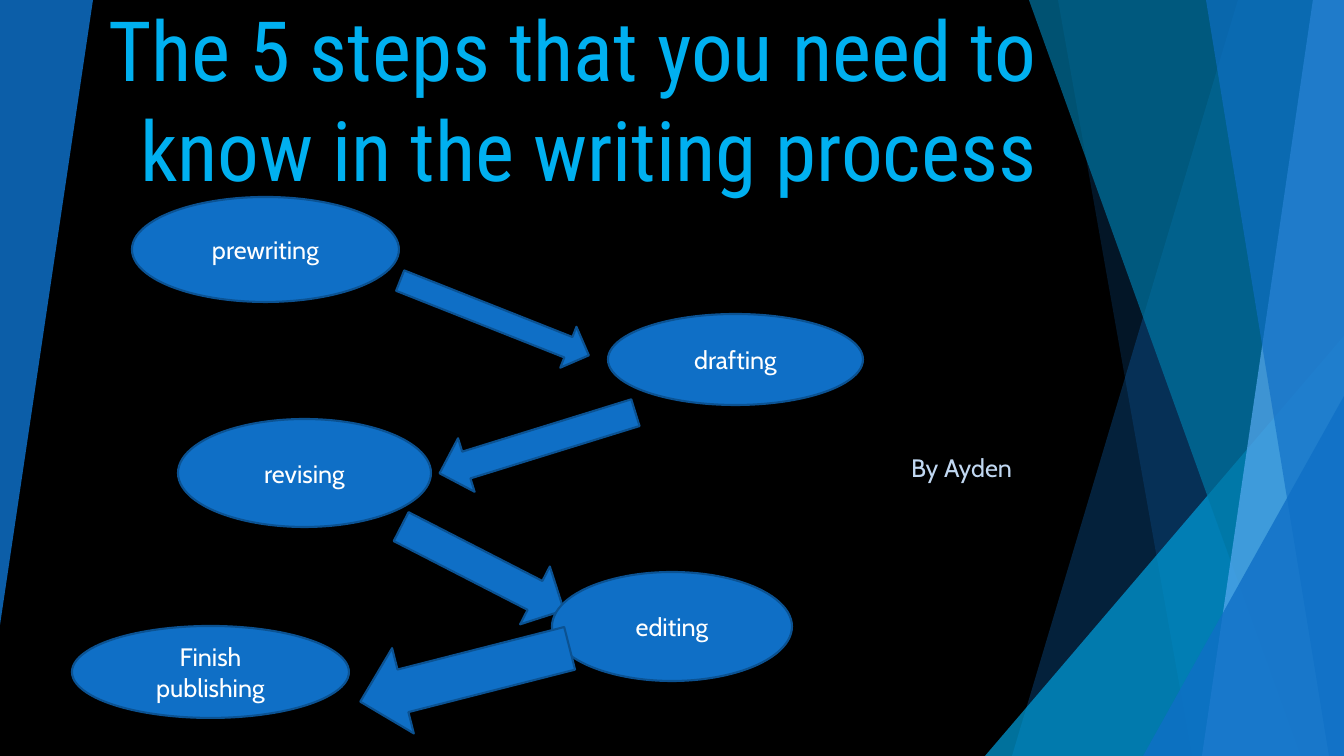
from lxml import etree
from pptx import Presentation
from pptx.dml.color import RGBColor
from pptx.enum.shapes import MSO_SHAPE
from pptx.enum.text import MSO_ANCHOR, PP_ALIGN
from pptx.oxml.ns import qn
from pptx.util import Emu, Pt

OVAL, ARROW, TRIANGLE = MSO_SHAPE.OVAL, MSO_SHAPE.RIGHT_ARROW, MSO_SHAPE.ISOSCELES_TRIANGLE
TOP, MIDDLE, BOTTOM = MSO_ANCHOR.TOP, MSO_ANCHOR.MIDDLE, MSO_ANCHOR.BOTTOM
CENTER, RIGHT = PP_ALIGN.CENTER, PP_ALIGN.RIGHT

WIDTH, HEIGHT = 1344, 756
SCALE = 12192000 / WIDTH
BLUE, DARK_BLUE = "0F6FC6", "0B5292"
HEADING, BODY = "Roboto Condensed", "Cabin"


def px(n):
    return Emu(round(n * SCALE))


def rgb(color):
    return RGBColor.from_string(color)


class Deck:
    def __init__(self):
        self.prs = Presentation()
        self.prs.slide_width, self.prs.slide_height = px(WIDTH), px(HEIGHT)

    def slide(self, background):
        self.s = self.prs.slides.add_slide(self.prs.slide_layouts[6])
        self.s.background.fill.solid()
        self.s.background.fill.fore_color.rgb = rgb(background)

    def paint(self, sp, color, alpha=100, line=None):
        sp.shadow.inherit = False
        sp.fill.solid()
        sp.fill.fore_color.rgb = rgb(color)
        if alpha < 100:
            clr = sp.element.spPr.find(qn("a:solidFill"))[0]
            etree.SubElement(clr, qn("a:alpha")).set("val", str(alpha * 1000))
        if line:
            sp.line.color.rgb = rgb(line)
            sp.line.width = Pt(1.5)
        else:
            sp.line.fill.background()

    def shape(self, kind, box, rotation=0, alpha=100, color=BLUE, line=None):
        sp = self.s.shapes.add_shape(kind, *map(px, box))
        sp.rotation = rotation
        self.paint(sp, color, alpha, line)
        return sp

    def triangle(self, box, color, alpha, rotation=0):
        sp = self.shape(TRIANGLE, box, rotation, alpha, color)
        sp.adjustments[0] = 1

    def band(self, top_x, bottom_x, color, alpha):
        """Fill from a slanted left edge to the right side of the slide."""
        fb = self.s.shapes.build_freeform(top_x, 0, scale=SCALE)
        fb.add_line_segments([(WIDTH, 0), (WIDTH, HEIGHT), (bottom_x, HEIGHT)])
        self.paint(fb.convert_to_shape(), color, alpha)

    def label(self, sp, text, size, font, color, align, anchor):
        tf = sp.text_frame
        tf.text = text
        tf.word_wrap = True
        tf.vertical_anchor = anchor
        p = tf.paragraphs[0]
        p.alignment = align
        r = p.runs[0]
        r.font.size, r.font.name = Pt(size), font
        r.font.color.rgb = rgb(color)

    def text(self, box, text, size, font, color, anchor=TOP):
        sp = self.s.shapes.add_textbox(*map(px, box))
        self.label(sp, text, size, font, color, RIGHT, anchor)
        return sp

    def step(self, box, name):
        sp = self.shape(OVAL, box, line=DARK_BLUE)
        self.label(sp, name, 18, BODY, "FFFFFF", CENTER, MIDDLE)

    def arrow(self, box, rotation):
        self.shape(ARROW, box, rotation, line=DARK_BLUE)


def main():
    deck = Deck()
    deck.slide("000000")

    # Translucent facets on both sides
    deck.band(1238, 1012, BLUE, 30)
    deck.band(1058, 1192, BLUE, 20)
    deck.triangle((985, 336, 359, 420), "009DD9", 72)
    deck.band(1029, 1301, "0076A3", 70)
    deck.band(1313, 1202, "59AAF2", 70)
    deck.band(1206, 1329, BLUE, 65)
    deck.triangle((1143, 396, 201, 360), BLUE, 80)
    deck.triangle((0, 0, 93, 625), BLUE, 85, rotation=180)

    # Title and author
    title = deck.text((29, 11, 1018, 289), "The 5 steps that you need to know in the writing process",
                      59.4, HEADING, "00B0F0", BOTTOM)
    title.text_frame.margin_bottom = px(102)
    deck.text((166, 447, 856, 121), "By Ayden", 18, BODY, "C1D8F2")

    # Steps, each followed by the arrow to the next one
    steps = [
        ("prewriting", (132, 197, 267, 105), (393, 296, 203, 44), 21.6),
        ("drafting", (608, 314, 255, 91), (435, 415, 205, 56), 162.8),
        ("revising", (178, 419, 253, 108), (391, 536, 183, 65), 27.2),
        ("editing", (552, 572, 240, 109), (357, 631, 216, 88), 165.7),
        ("Finish publishing", (72, 626, 277, 92), None, 0),
    ]
    # The arrow into "editing" lies under its oval, the one out of it on top
    for name, oval_box, arrow_box, rotation in steps:
        deck.step(oval_box, name)
        if arrow_box:
            deck.arrow(arrow_box, rotation)

    deck.prs.save("out.pptx")


if __name__ == "__main__":
    main()
